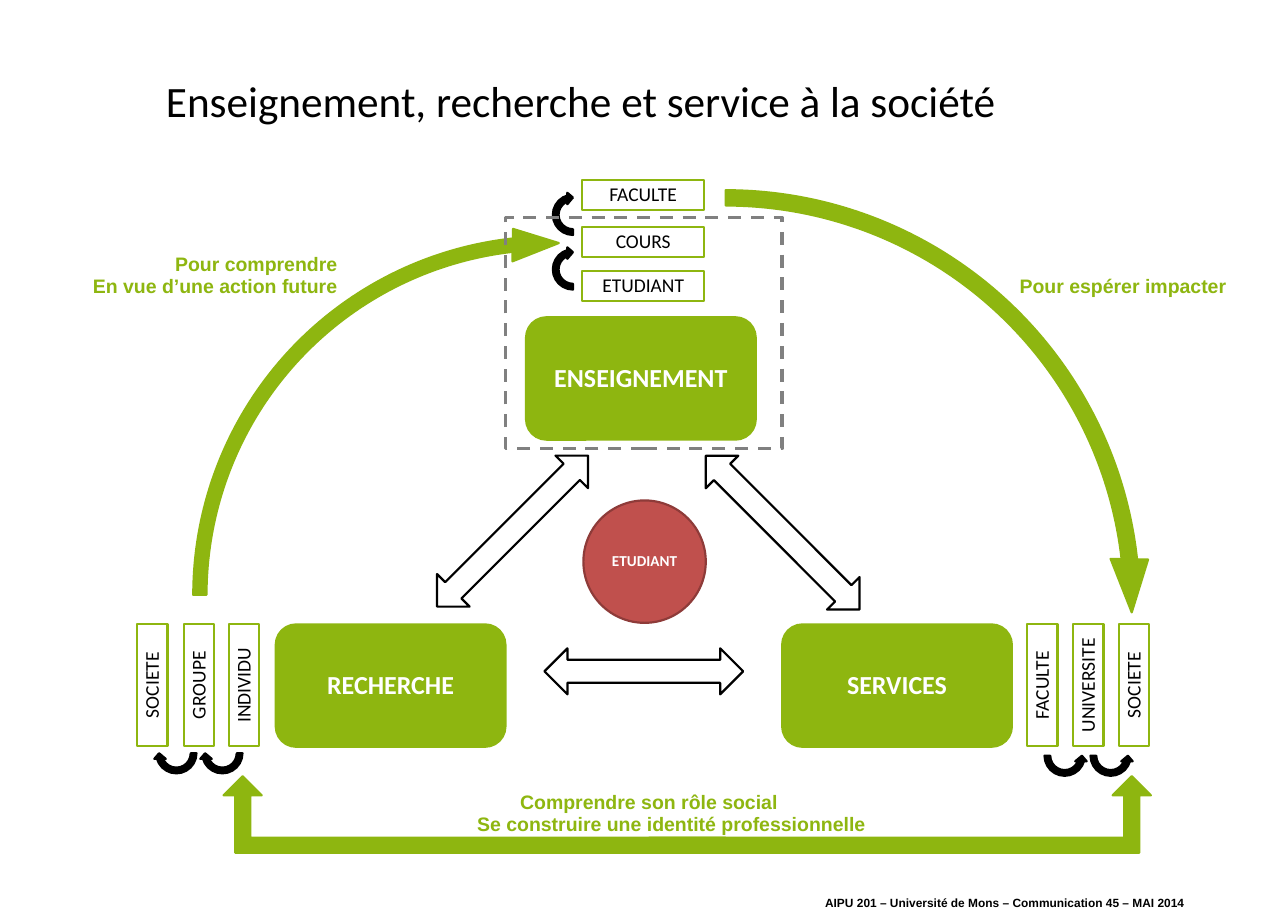
from pptx import Presentation
from pptx.dml.color import RGBColor
from pptx.enum.dml import MSO_LINE
from pptx.enum.shapes import MSO_SHAPE
from pptx.enum.text import MSO_ANCHOR, MSO_AUTO_SIZE, PP_ALIGN
from pptx.util import Cm, Pt

ROUNDED, RECT, OVAL = MSO_SHAPE.ROUNDED_RECTANGLE, MSO_SHAPE.RECTANGLE, MSO_SHAPE.OVAL
DOUBLE_ARROW, BENT_ARROW = MSO_SHAPE.LEFT_RIGHT_ARROW, MSO_SHAPE.BENT_UP_ARROW
CURVED_ARROW = MSO_SHAPE.CIRCULAR_ARROW
LEFT, CENTER, RIGHT = PP_ALIGN.LEFT, PP_ALIGN.CENTER, PP_ALIGN.RIGHT
MIDDLE, NO_AUTOFIT, DASH = MSO_ANCHOR.MIDDLE, MSO_AUTO_SIZE.NONE, MSO_LINE.DASH

COLORS = {"green": "8EB610", "red": "C0504D", "dark_red": "8E3B39",
          "black": "000000", "white": "FFFFFF", "grey": "808080"}
LINE_SPACING = 0.93
SWEEP = (0.018, 4.504, 212.18, 162.011, 0.022)  # thin quarter-circle arrow
ELBOW = (0.197, 0.25, 0.25)
LABEL_LENGTH, LABEL_DEPTH = 3.99, 0.99
HOOK_SIZE = 1.5


def rgb(name):
    return RGBColor.from_string(COLORS[name])


def format_text(frame, size, color, font, bold=False, aligns=(CENTER,)):
    frame.word_wrap = True
    for paragraph, align in zip(frame.paragraphs, aligns):
        paragraph.alignment = align
        paragraph.line_spacing = LINE_SPACING
        for run in paragraph.runs:
            run.font.size = Pt(size)
            run.font.bold = bold
            run.font.name = font
            run.font.color.rgb = rgb(color)


def add_figure(slide, kind, box, fill=None, line="green", width=2,
               rotation=0, flips=(), adjustments=()):
    figure = slide.shapes.add_shape(kind, *(Cm(length) for length in box))
    figure.shadow.inherit = False
    if fill:
        figure.fill.solid()
        figure.fill.fore_color.rgb = rgb(fill)
    else:
        figure.fill.background()
    figure.line.color.rgb = rgb(line)
    figure.line.width = Pt(width)
    figure.rotation = rotation
    for flip in flips:
        figure._element.spPr.xfrm.set(flip, "1")
    for index, value in enumerate(adjustments):
        figure.adjustments[index] = value
    return figure


def write_inside(figure, text, size, color, bold):
    figure.text_frame.text = text
    figure.text_frame.vertical_anchor = MIDDLE
    format_text(figure.text_frame, size, color, "Calibri", bold)


def add_pole(slide, text, left, top):
    pole = add_figure(slide, ROUNDED, (left, top, 7.49, 3.99), "green")
    write_inside(pole, text, 24, "white", True)


def add_level(slide, text, center_x, center_y, rotation=0):
    box = (center_x - LABEL_LENGTH / 2, center_y - LABEL_DEPTH / 2,
           LABEL_LENGTH, LABEL_DEPTH)
    level = add_figure(slide, RECT, box, rotation=rotation)
    write_inside(level, text, 18, "black", False)


def add_hook(slide, left, top, rotation=0, flips=()):
    add_figure(slide, CURVED_ARROW, (left, top, HOOK_SIZE, HOOK_SIZE), "black",
               "black", rotation=rotation, flips=flips)


def add_note(slide, lines, box, aligns, size=18, color="green"):
    note = slide.shapes.add_textbox(*(Cm(length) for length in box))
    note.text_frame.text = "\n".join(lines)
    format_text(note.text_frame, size, color, "Arial", True, aligns)
    return note.text_frame


def set_insets(frame, sides, top, bottom):
    frame.margin_left = frame.margin_right = Cm(sides)
    frame.margin_top, frame.margin_bottom = Cm(top), Cm(bottom)


def add_title(slide, text):
    title = slide.shapes.title
    title.left, title.top, title.width, title.height = Cm(5), Cm(1), Cm(37), Cm(4.62)
    frame = title.text_frame
    frame.text = text
    frame.auto_size = NO_AUTOFIT
    frame.vertical_anchor = MIDDLE
    set_insets(frame, 0.41, 0.1, 0.2)
    format_text(frame, 40, "black", "Calibri", aligns=(LEFT,))
    frame.paragraphs[0].line_spacing = 1.0
    frame.paragraphs[0].space_after = Pt(14.2)


def main():
    prs = Presentation()
    prs.slide_width, prs.slide_height = Cm(41.99), Cm(29.69)
    slide = prs.slides.add_slide(prs.slide_layouts[5])
    add_title(slide, "Enseignement, recherche et service à la société")

    # Three poles around the student
    add_pole(slide, "RECHERCHE", 8.99, 20.35)
    add_pole(slide, "SERVICES", 25.5, 20.35)
    add_pole(slide, "ENSEIGNEMENT", 17.15, 10.34)
    for left, top, length, rotation in ((21.97, 16.61, 7.09, 45),
                                        (13.23, 16.56, 6.96, 315),
                                        (17.75, 21.13, 6.48, 0)):
        add_figure(slide, DOUBLE_ARROW, (left, top, length, 1.5), line="black",
                   rotation=rotation)
    student = add_figure(slide, OVAL, (19.02, 16.31, 3.99, 3.99), "red", "dark_red")
    write_inside(student, "ETUDIANT", 14, "white", True)

    # Teaching to services
    add_figure(slide, CURVED_ARROW, (9.8, 5.84, 27.71, 27.71), "green",
               adjustments=SWEEP)
    add_note(slide, ["Pour espérer impacter"], (32.99, 8.86, 8.51, 0.97), (LEFT,))

    # Research and services
    for left, flips in ((21.16, ()), (7.29, ("flipH",))):
        add_figure(slide, BENT_ARROW, (left, 25.3, 16.36, 2.49), "green",
                   flips=flips, adjustments=ELBOW)
    add_note(slide, ["Comprendre son rôle social",
                     "Se construire une identité professionnelle"],
             (13.84, 25.7, 14.63, 1.68), (CENTER, RIGHT))

    # Levels beside each pole
    for text, x in (("FACULTE", 33.98), ("UNIVERSITE", 35.48), ("SOCIETE", 36.97),
                    ("INDIVIDU", 7.96), ("GROUPE", 6.49), ("SOCIETE", 4.97)):
        add_level(slide, text, x, 22.33, 270)
    for text, y in (("ETUDIANT", 9.33), ("COURS", 7.89), ("FACULTE", 6.36)):
        add_level(slide, text, 20.97, y)

    # Hooks from one level to the next
    for step in range(2):
        add_hook(slide, 33.96 + step * HOOK_SIZE, 23.88, flips=("flipV",))
        add_hook(slide, 5 + step * HOOK_SIZE, 23.8, flips=("flipH", "flipV"))
        add_hook(slide, 17.93, 6.25 + step * 1.78, rotation=270)

    # Footer
    footer = add_note(slide, ["AIPU 201 – Université de Mons – Communication 45 – MAI 2014"],
                      (18.16, 29.06, 20.83, 1.27), (RIGHT,), 11, "black")
    set_insets(footer, 0.36, 0.18, 0.18)

    # Research to teaching
    add_note(slide, ["Pour comprendre", "En vue d’une action future"],
             (2.74, 8.15, 8.51, 1.68), (RIGHT, RIGHT))
    add_figure(slide, CURVED_ARROW, (5.99, 7.39, 24, 24), "green", rotation=270,
               adjustments=SWEEP)

    # Dashed frame around teaching
    frame = add_figure(slide, RECT, (16.48, 7.09, 9.02, 7.52), line="grey", width=3)
    frame.line.dash_style = DASH

    prs.save("out.pptx")


if __name__ == "__main__":
    main()
